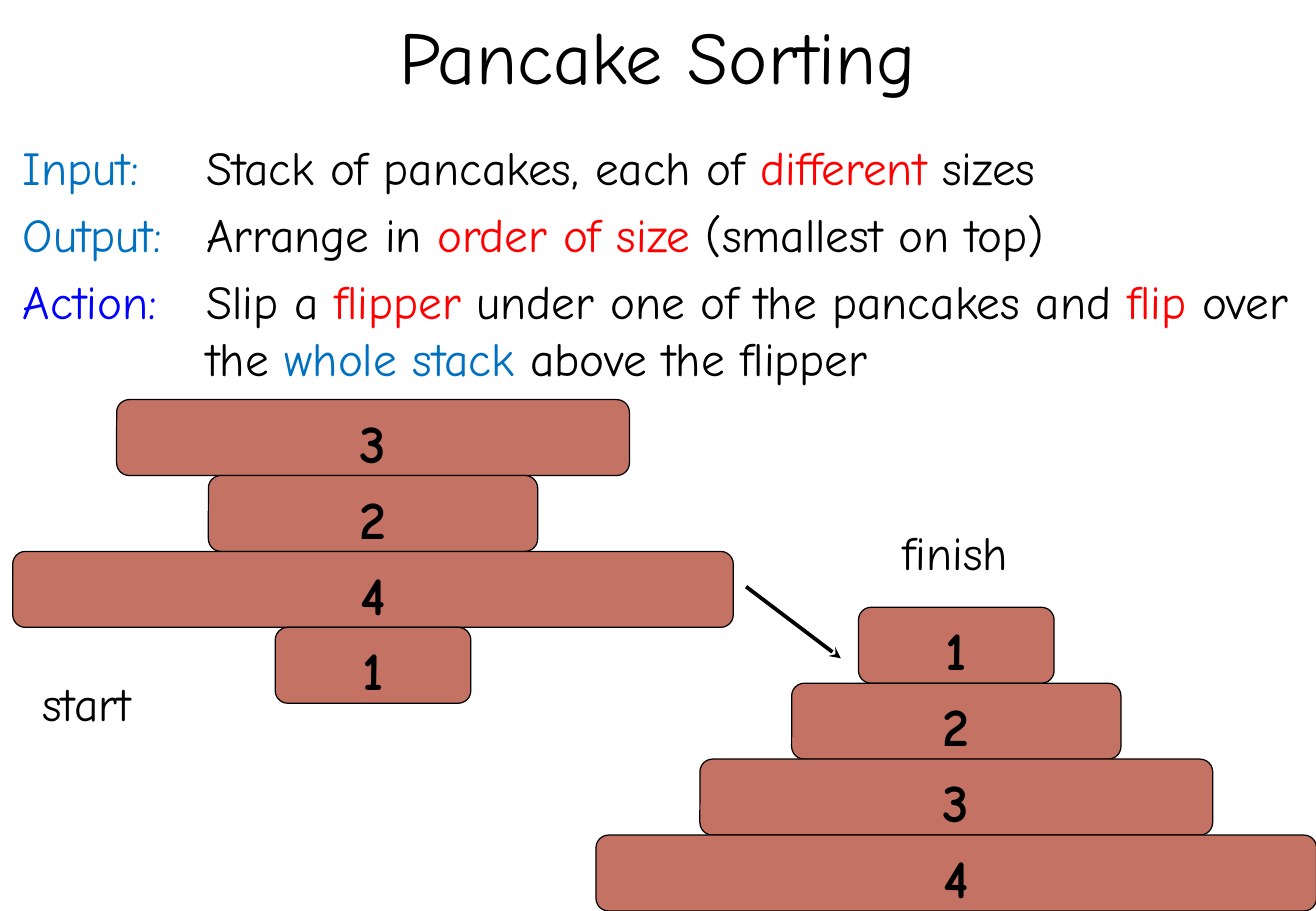
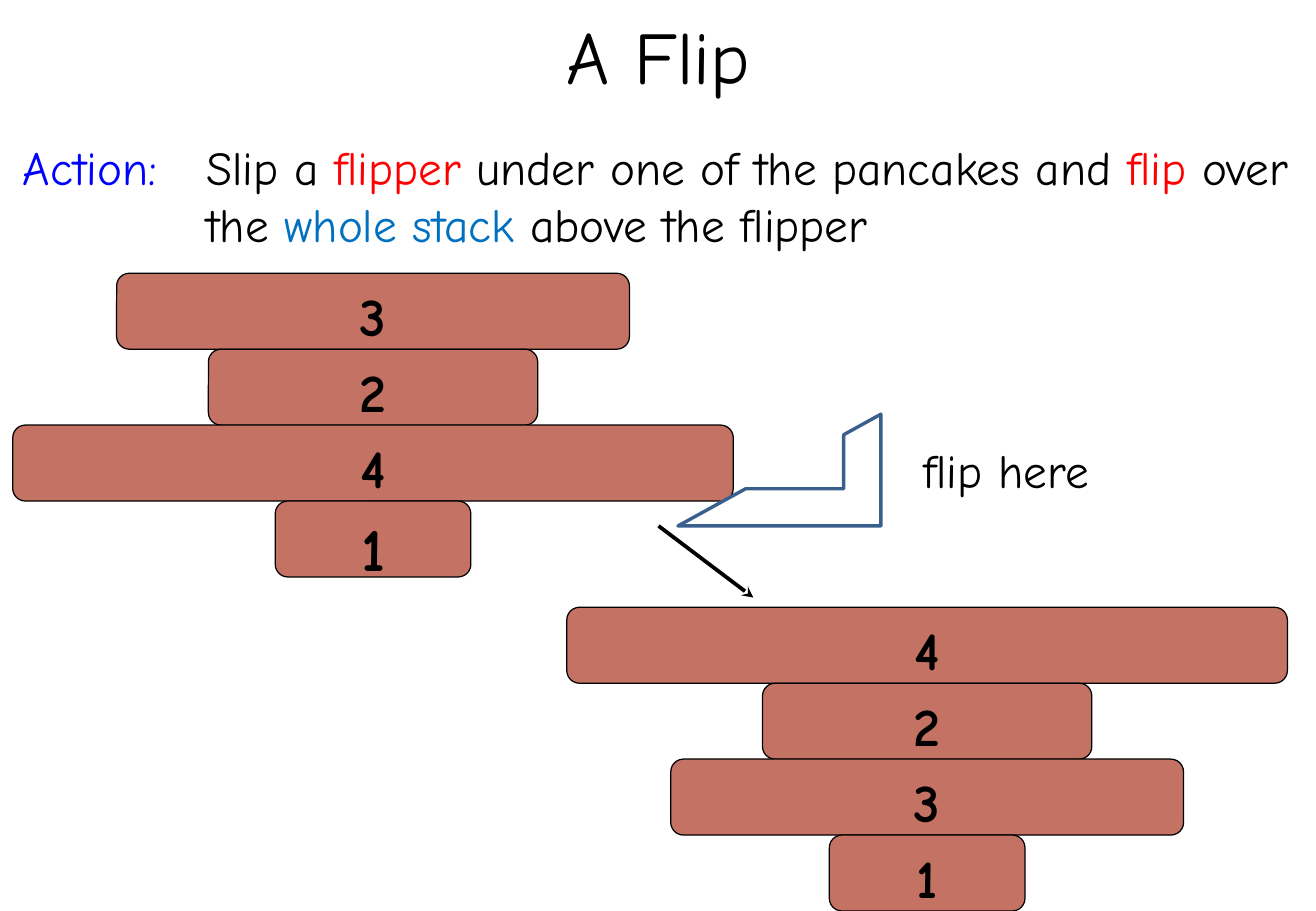
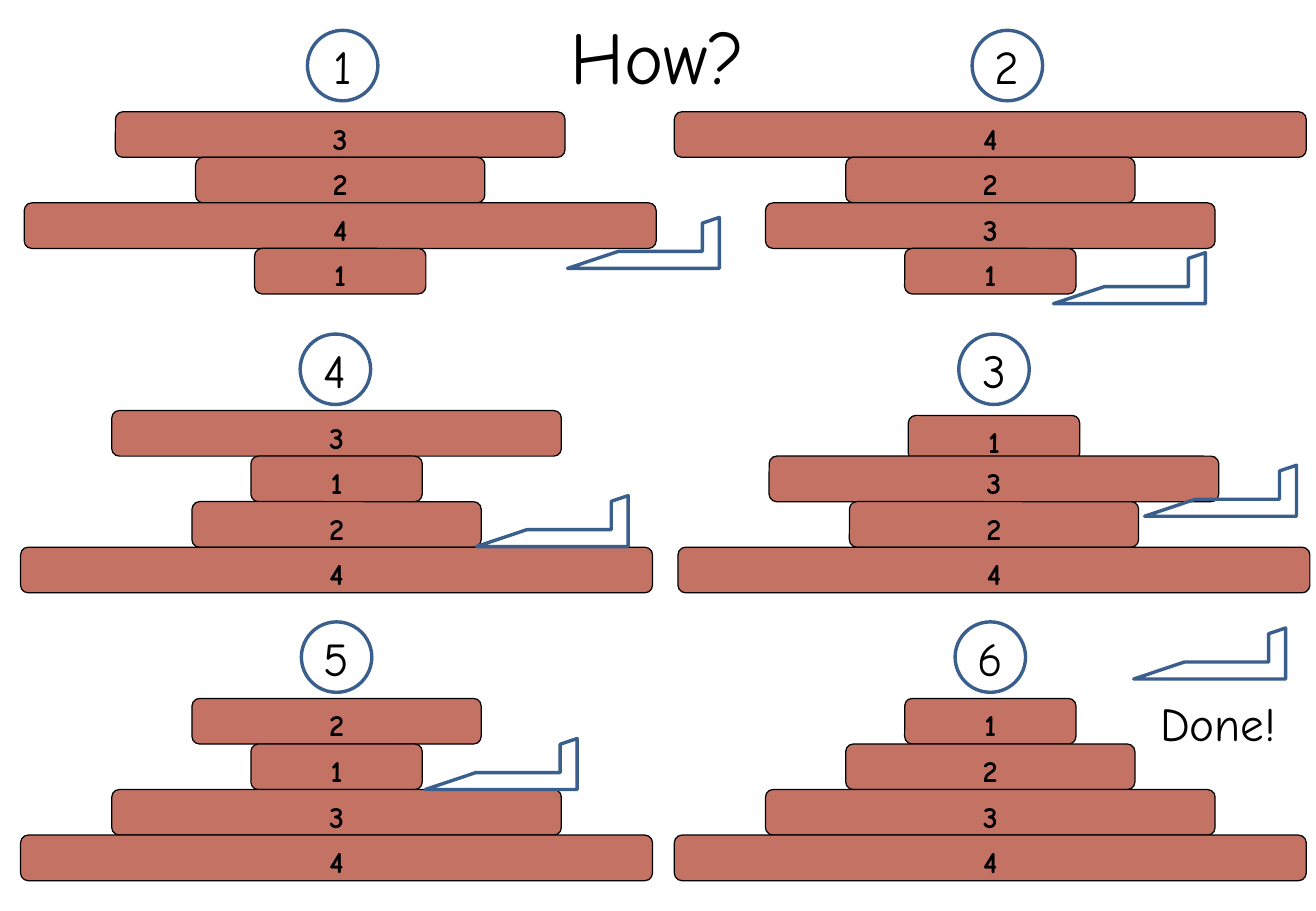
from lxml import etree
from pptx import Presentation
from pptx import util as u
from pptx.dml.color import RGBColor
from pptx.enum import shapes, text
from pptx.oxml import ns

FONT = "Comic Neue"
BLACK, RED, BLUE, DEEP_BLUE = "000000", "FF0000", "0070C0", "0000FF"
PANCAKE, OUTLINE = "C47264", "3A5F8C"

# Pancake widths by number, pancake height, and number size
LARGE = ({1: 1.61, 2: 2.71, 3: 4.22, 4: 5.93}, 5 / 8, 32)
SMALL = ({1: 1.41, 2: 2.38, 3: 3.7, 4: 5.2}, 3 / 8, 18)

INPUT = [("Input:\t", BLUE), ("Stack of pancakes, each of ", BLACK),
         ("different", RED), (" sizes", BLACK)]
OUTPUT = [("Output:\t", BLUE), ("Arrange in ", BLACK),
          ("order of size", RED), (" (smallest on top)", BLACK)]
ACTION = [("Action:", DEEP_BLUE), ("\tSlip a ", BLACK), ("flipper", RED),
          (" under one of the pancakes and ", BLACK), ("flip", RED),
          (" over the ", BLACK), ("whole stack ", BLUE),
          ("above the flipper", BLACK)]


def colour(value):
    return RGBColor.from_string(value)


def inches(*lengths):
    return [u.Inches(length) for length in lengths]


def set_font(paragraph, size, bold=False):
    paragraph.font.name = FONT
    paragraph.font.size = u.Pt(size)
    paragraph.font.bold = bold
    paragraph.font.color.rgb = colour(BLACK)


def write(shape, words, size, bold=False, centred=True):
    paragraph = shape.text_frame.paragraphs[0]
    paragraph.text = words
    paragraph.alignment = (text.PP_ALIGN.CENTER if centred
                           else text.PP_ALIGN.LEFT)
    set_font(paragraph, size, bold)


def add_outlined(slide, kind, box, line, width, fill=None):
    shape = slide.shapes.add_shape(kind, *inches(*box))
    shape.shadow.inherit = False
    shape.line.color.rgb = colour(line)
    shape.line.width = u.Pt(width)
    if fill:
        shape.fill.solid()
        shape.fill.fore_color.rgb = colour(fill)
    else:
        shape.fill.background()
    return shape


# Text regions
def add_title(slide, words):
    title = slide.shapes.add_textbox(*inches(0.54, -0.17, 9.75, 1.25))
    title.text_frame.word_wrap = True
    title.text_frame.vertical_anchor = text.MSO_ANCHOR.MIDDLE
    write(title, words, 44)


def add_rules(slide, rules, height):
    frame = slide.shapes.add_textbox(
        *inches(0.09, 1.09, 10.74, height)).text_frame
    frame.word_wrap = True
    frame.auto_size = text.MSO_AUTO_SIZE.SHAPE_TO_FIT_TEXT
    for index, rule in enumerate(rules):
        paragraph = frame.add_paragraph() if index else frame.paragraphs[0]
        set_font(paragraph, 28)
        paragraph.space_before = u.Pt(6)
        properties = paragraph._p.get_or_add_pPr()
        properties.set("marL", str(u.Inches(1.51)))
        properties.set("indent", str(u.Inches(-1.51)))
        for words, tint in rule:
            run = paragraph.add_run()
            run.text = words
            run.font.color.rgb = colour(tint)


def add_label(slide, words, left, top, width, centred=False):
    label = slide.shapes.add_textbox(*inches(left, top, width, 0.57))
    label.text_frame.word_wrap = False
    label.text_frame.auto_size = text.MSO_AUTO_SIZE.SHAPE_TO_FIT_TEXT
    write(label, words, 28, centred=centred)


# Drawing parts
def add_stack(slide, order, centre, top, scale, sizes=None, first_drop=0):
    """Pile pancakes in order from the top, centred on one axis."""
    widths, height, size = scale
    for level, number in enumerate(order):
        width = widths[number]
        drop = 0 if level else first_drop
        box = (centre - width / 2, top + level * height + drop, width, height)
        pancake = add_outlined(slide, shapes.MSO_SHAPE.ROUNDED_RECTANGLE,
                               box, BLACK, 0.75, PANCAKE)
        pancake.text_frame.word_wrap = False
        pancake.text_frame.vertical_anchor = text.MSO_ANCHOR.TOP
        write(pancake, str(number), (sizes or {}).get(number, size), bold=True)


def add_flipper(slide, left, top, width=1.25, height=0.42):
    """Turn a half frame on its side so that it fills the given box."""
    box = (left + (width - height) / 2, top + (height - width) / 2,
           height, width)
    flipper = add_outlined(slide, shapes.MSO_SHAPE.HALF_FRAME, box, OUTLINE, 2)
    flipper.rotation = 90
    flipper._element.spPr.find(ns.qn("a:xfrm")).set("flipH", "1")


def add_step_number(slide, number, centre, top, diameter=0.58):
    box = (centre - diameter / 2, top, diameter, diameter)
    circle = add_outlined(slide, shapes.MSO_SHAPE.OVAL, box, OUTLINE, 2)
    circle.text_frame.vertical_anchor = text.MSO_ANCHOR.MIDDLE
    write(circle, str(number), 28)


def add_arrow(slide, left, top, width=0.78, height=0.59):
    arrow = slide.shapes.add_connector(
        shapes.MSO_CONNECTOR.STRAIGHT,
        *inches(left, top, left + width, top + height))
    arrow.line.color.rgb = colour(BLACK)
    arrow.line.width = u.Pt(2.25)
    etree.SubElement(arrow.line._get_or_add_ln(), ns.qn("a:tailEnd"),
                     type="stealth")
    etree.SubElement(arrow._element.spPr, ns.qn("a:effectLst"))


# Slides
def build_problem(slide):
    add_title(slide, "Pancake Sorting")
    add_rules(slide, [INPUT, OUTPUT, ACTION], 2.15)
    add_stack(slide, (3, 2, 4, 1), 3.07, 3.29, LARGE)
    add_stack(slide, (1, 2, 3, 4), 7.87, 5, LARGE)
    add_arrow(slide, 6.14, 4.83)
    add_label(slide, "finish", 7.33, 4.26, 1.24)
    add_label(slide, "start", 0.25, 5.5, 1.16)


def build_flip(slide):
    add_title(slide, "A Flip")
    add_rules(slide, [ACTION], 1.04)
    add_stack(slide, (3, 2, 4, 1), 3.07, 2.25, LARGE, sizes={1: 36})
    add_flipper(slide, 5.58, 3.41, 1.67, 0.92)
    add_label(slide, "flip here", 7.5, 3.58, 1.79)
    add_stack(slide, (4, 2, 3, 1), 7.63, 5, LARGE)
    add_arrow(slide, 5.42, 4.33)


def build_steps(slide):
    add_title(slide, "How?")
    # Order, stack axis and top, circle axis and top, flipper corner, drop
    steps = [
        ((3, 2, 4, 1), 2.8, 0.92, 2.82, 0.25, (4.67, 1.79), 0),
        ((4, 2, 3, 1), 8.15, 0.92, 8.29, 0.25, (8.67, 2.08), 0),
        ((1, 3, 2, 4), 8.18, 3.38, 8.18, 2.75, (9.42, 3.83), 0.04),
        ((3, 1, 2, 4), 2.77, 3.38, 2.76, 2.75, (3.92, 4.08), 0),
        ((2, 1, 3, 4), 2.77, 5.75, 2.77, 5.12, (3.5, 6.08), 0),
        ((1, 2, 3, 4), 8.15, 5.75, 8.15, 5.12, (9.33, 5.17), 0),
    ]
    for number, step in enumerate(steps, 1):
        order, centre, top, circle_centre, circle_top, corner, drop = step
        add_stack(slide, order, centre, top, SMALL, first_drop=drop)
        add_flipper(slide, *corner)
        add_step_number(slide, number, circle_centre, circle_top)
    add_label(slide, "Done!", 9.42, 5.67, 1.21, centred=True)


def main():
    presentation = Presentation()
    presentation.slide_width, presentation.slide_height = inches(10.83, 7.5)
    blank = presentation.slide_layouts[6]
    for build in (build_problem, build_flip, build_steps):
        build(presentation.slides.add_slide(blank))
    presentation.save("out.pptx")


if __name__ == "__main__":
    main()
